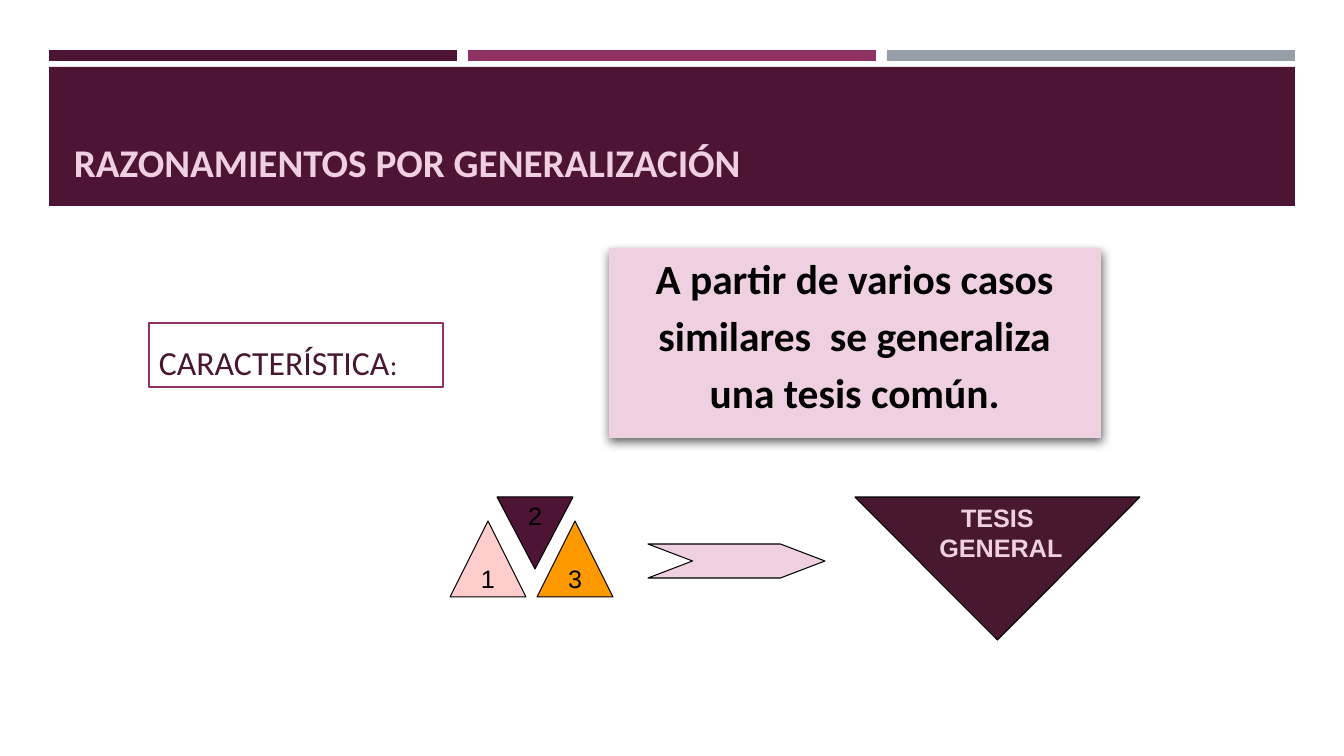
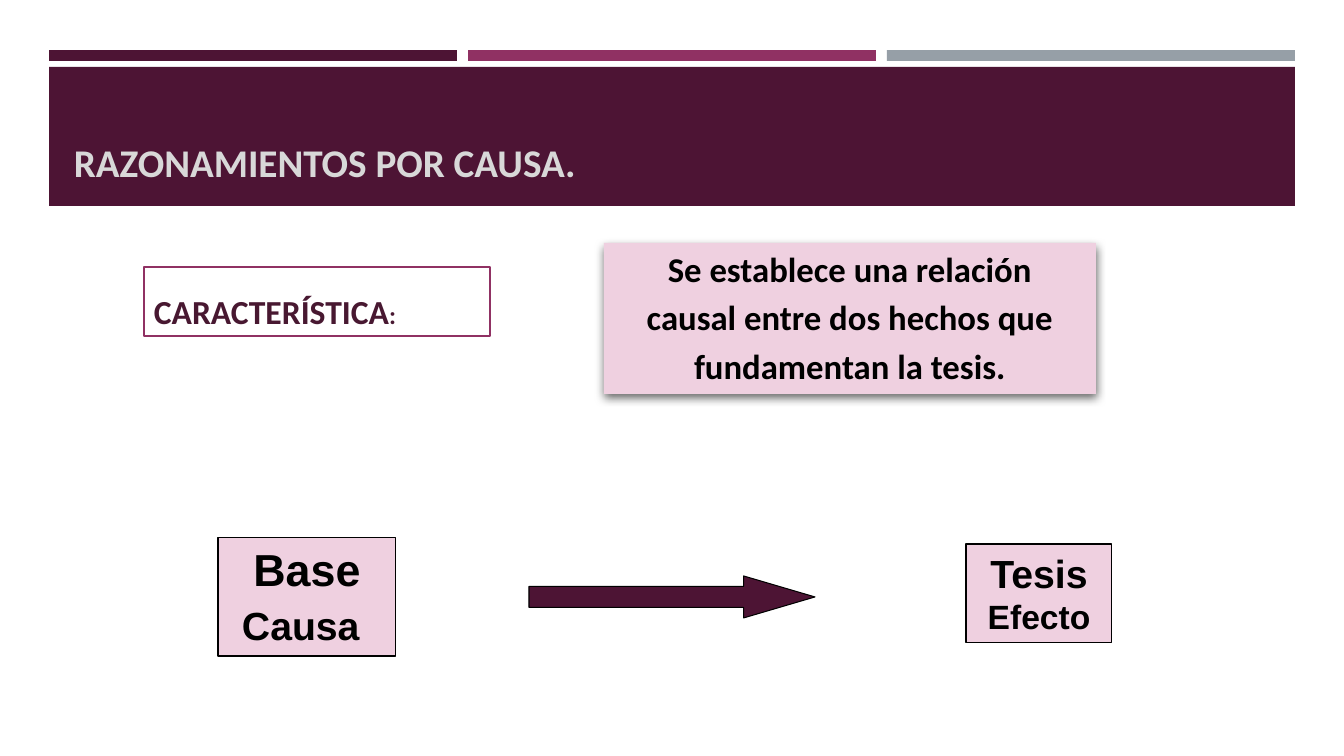
import lxml.etree
import pptx
import pptx.dml.color
import pptx.enum.shapes
import pptx.enum.text
import pptx.oxml
import pptx.oxml.ns
import pptx.util

RGBColor = pptx.dml.color.RGBColor
KIND = pptx.enum.shapes.MSO_SHAPE
ALIGN = pptx.enum.text.PP_ALIGN
ANCHOR = pptx.enum.text.MSO_ANCHOR

PLUM = RGBColor(0x4D, 0x14, 0x34)
DARK_PLUM = RGBColor(0x48, 0x18, 0x31)
MAGENTA = RGBColor(0x90, 0x31, 0x63)
GRAY = RGBColor(0x96, 0x9F, 0xA7)
LIGHT_GRAY = RGBColor(0xD8, 0xD8, 0xD8)
PINK = RGBColor(0xEF, 0xD0, 0xE0)
SALMON = RGBColor(0xFF, 0xCC, 0xCC)
ORANGE = RGBColor(0xFF, 0x99, 0x00)
WHITE = RGBColor(0xFF, 0xFF, 0xFF)
BLACK = RGBColor(0x00, 0x00, 0x00)

PX = 914400 / 100.8
BAR_PITCH = 419
SHADOW = (
    f'<a:effectLst {pptx.oxml.ns.nsdecls("a")}>'
    '<a:outerShdw blurRad="88900" dist="38100" dir="5040000" algn="ctr" rotWithShape="0">'
    '<a:srgbClr val="000000"><a:alpha val="60000"/></a:srgbClr>'
    '</a:outerShdw></a:effectLst>'
)


def add_box(slide, kind, frame, fill, line=None, line_width=0.75):
    shape = slide.shapes.add_shape(kind, *[round(length * PX) for length in frame])
    shape.shadow.inherit = False
    shape.fill.solid()
    shape.fill.fore_color.rgb = fill
    if line is None:
        shape.line.fill.background()
    else:
        shape.line.color.rgb = line
        shape.line.width = pptx.util.Pt(line_width)
    return shape


def write(shape, lines, font, color, bold=False, align=ALIGN.CENTER,
          anchor=ANCHOR.TOP, space=0, wrap=True):
    frame = shape.text_frame
    frame.word_wrap = wrap
    frame.vertical_anchor = anchor
    for index, pieces in enumerate(lines):
        paragraph = frame.add_paragraph() if index else frame.paragraphs[0]
        paragraph.alignment = align
        paragraph.space_before = pptx.util.Pt(space)
        paragraph.font.name = font
        paragraph.font.bold = bold
        paragraph.font.color.rgb = color
        paragraph.font.size = pptx.util.Pt(pieces[0][1])
        for text, size in pieces:
            run = paragraph.add_run()
            run.text = text
            if size != pieces[0][1]:
                run.font.size = pptx.util.Pt(size)


presentation = pptx.Presentation()
presentation.slide_width = round(1344 * PX)
presentation.slide_height = round(756 * PX)

pages = [
    dict(title="RAZONAMIENTOS POR GENERALIZACIÓN", title_color=PINK,
         label_frame=(149, 323, 294, 64), label_sizes=(24.1, 20.4), label_bold=False,
         body_frame=(609, 248, 492, 190), body_size=29.6, body_space=5.3,
         body=["A partir de varios casos", "similares  se generaliza", "una tesis común."]),
    dict(title="RAZONAMIENTOS POR CAUSA.", title_color=LIGHT_GRAY,
         label_frame=(144, 267, 346, 69), label_sizes=(24, 18), label_bold=True,
         body_frame=(604, 243, 492, 151), body_size=24.8, body_space=4.7,
         body=["Se establece una relación", "causal entre dos hechos que", "fundamentan la tesis."]),
]

slides = []
for page in pages:
    slide = presentation.slides.add_slide(presentation.slide_layouts[6])
    slides.append(slide)
    for column, color in enumerate((PLUM, MAGENTA, GRAY)):
        add_box(slide, KIND.RECTANGLE, (49 + column * BAR_PITCH, 50, 408, 11), color)
    add_box(slide, KIND.RECTANGLE, (49, 67, 1246, 139), PLUM)

    title = slide.shapes.add_textbox(*[round(length * PX) for length in (64, 81, 1216, 109)])
    write(title, [[(page["title"], 28)]], "Calibri", page["title_color"], True,
          ALIGN.LEFT, ANCHOR.BOTTOM)

    label = add_box(slide, KIND.RECTANGLE, page["label_frame"], WHITE, MAGENTA, 1.75)
    word_size, colon_size = page["label_sizes"]
    write(label, [[("CARACTERÍSTICA", word_size), (":", colon_size)]], "Calibri",
          DARK_PLUM, page["label_bold"], ALIGN.LEFT, ANCHOR.BOTTOM)

    body = add_box(slide, KIND.RECTANGLE, page["body_frame"], PINK)
    properties = body.fill._xPr
    properties.remove(properties.find(pptx.oxml.ns.qn("a:effectLst")))
    properties.append(pptx.oxml.parse_xml(SHADOW))
    write(body, [[(line, page["body_size"])] for line in page["body"]], "Calibri",
          BLACK, True, space=page["body_space"])

generalization, cause = slides

cases = [
    ("1", KIND.FLOWCHART_EXTRACT, (450, 521, 76, 76), SALMON),
    ("2", KIND.FLOWCHART_MERGE, (497, 497, 76, 72), PLUM),
    ("3", KIND.FLOWCHART_EXTRACT, (537, 521, 76, 76), ORANGE),
]
for number, kind, frame, fill in cases:
    triangle = add_box(generalization, kind, frame, fill, BLACK)
    write(triangle, [[(number, 18)]], "Arial", BLACK, anchor=ANCHOR.MIDDLE, wrap=False)

chevron = add_box(generalization, KIND.CHEVRON, (648, 544, 177, 34), PINK, BLACK)
chevron.adjustments[0] = 1.31

thesis = add_box(generalization, KIND.FLOWCHART_MERGE, (855, 497, 285, 143), DARK_PLUM, BLACK)
write(thesis, [[("TESIS", 18)], [(" GENERAL", 18)]], "Arial", PINK, True,
      anchor=ANCHOR.MIDDLE, wrap=False)

facts = [
    ((218, 537, 178, 119), [[("Base", 32)], [("Causa", 28), (" ", 32)]]),
    ((966, 544, 146, 99), [[("Tesis", 28)], [("Efecto", 24)]]),
]
for frame, lines in facts:
    fact = add_box(cause, KIND.RECTANGLE, frame, PINK, BLACK)
    write(fact, lines, "Arial", BLACK, True)

arrow = add_box(cause, KIND.RIGHT_ARROW, (529, 576, 286, 42), PLUM, BLACK)
arrow.adjustments[0] = 0.5
arrow.adjustments[1] = 1.7

presentation.save("out.pptx")
